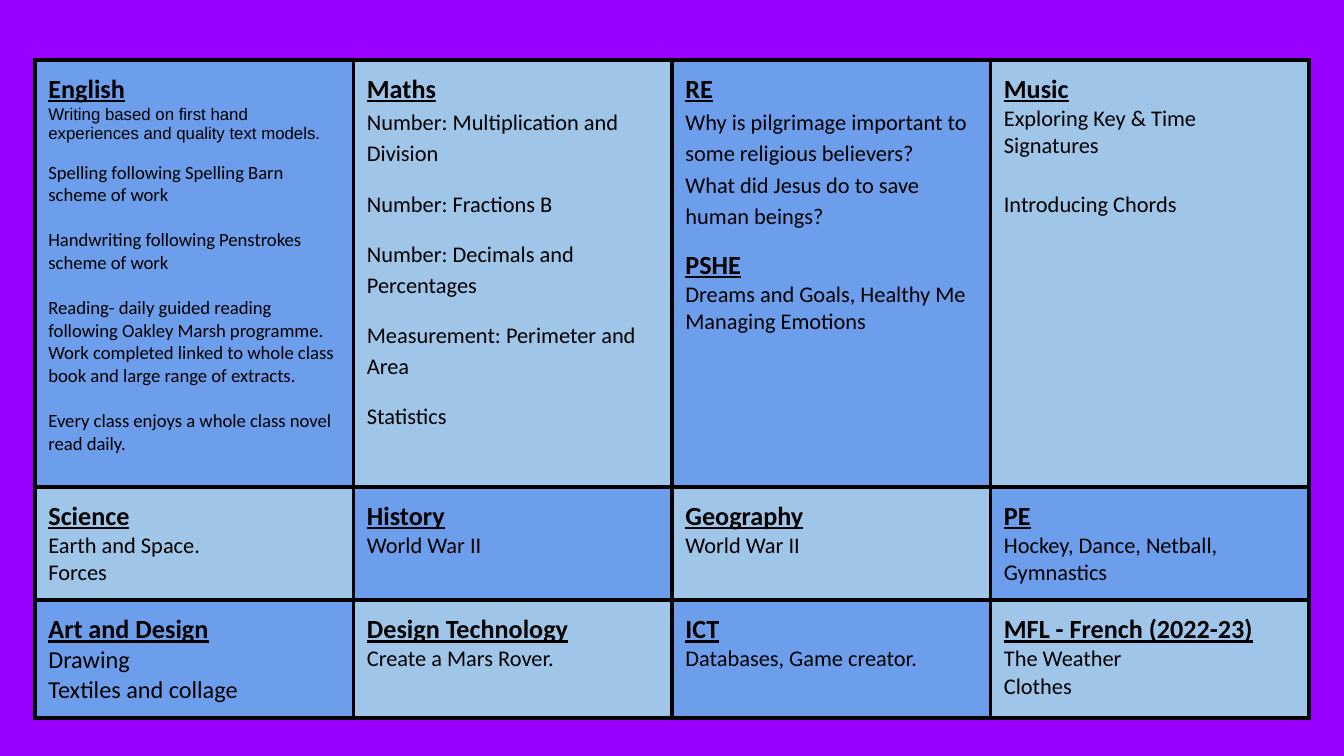
from lxml import etree
from pptx import Presentation, util as u
from pptx.dml.color import RGBColor
from pptx.oxml import ns

# Paragraph: (text, overrides); gap is the space before it in points
LOOSE = {"leading": 1.15}
SPACED = {"leading": 1.15, "gap": 10}
SMALL = {"size": "small", "gap": 12}
LARGE = {"size": "large"}
HEADING = {"size": "heading", "heading": True}

SUBJECTS = [
    [
        ("English", [
            ("Writing based on first hand experiences and quality text models.",
             {"size": "intro", "font": "intro_font"}),
            ("Spelling following Spelling Barn scheme of work", SMALL | {"gap": 10}),
            ("Handwriting following Penstrokes scheme of work", SMALL),
            ("Reading- daily guided reading following Oakley Marsh programme. "
             "Work completed linked to whole class book and large range of extracts.", SMALL),
            ("Every class enjoys a whole class novel read daily.", SMALL),
        ]),
        ("Maths", [
            ("Number: Multiplication and Division", LOOSE),
            ("Number: Fractions B", SPACED),
            ("Number: Decimals and Percentages", SPACED),
            ("Measurement: Perimeter and Area", SPACED),
            ("Statistics", SPACED),
        ]),
        ("RE", [
            ("Why is pilgrimage important to some religious believers?", LOOSE),
            ("What did Jesus do to save human beings?", LOOSE),
            ("PSHE", HEADING | {"gap": 10}),
            ("Dreams and Goals, Healthy Me", {}),
            ("Managing Emotions", {}),
        ]),
        ("Music", [
            ("Exploring Key & Time Signatures", {}),
            ("Introducing Chords", LOOSE | {"gap": 14.5}),
        ]),
    ],
    [
        ("Science", [("Earth and Space.", {}), ("Forces", {})]),
        ("History", [("World War II", {})]),
        ("Geography", [("World War II", {})]),
        ("PE", [("Hockey, Dance, Netball, Gymnastics", {})]),
    ],
    [
        ("Art and Design", [("Drawing", LARGE), ("Textiles and collage", LARGE)]),
        ("Design Technology", [("Create a Mars Rover.", {})]),
        ("ICT", [("Databases, Game creator.", {})]),
        ("MFL - French (2022-23)", [("The Weather", {}), ("Clothes", {})]),
    ],
]

THEME = {
    "background": "9900FF", "ink": "000000", "fills": ("6D9EEB", "9FC5E8"),
    "body_font": "Calibri", "intro_font": "Arial",
    "heading": 14, "large": 13, "body": 12, "small": 10, "intro": 9,
    "border": 2.25,
}
PX = u.Inches(10) / 1344
SLIDE = (1344, 756)
LEFT, TOP, WIDTH = 35, 60, 1274
ROW_HEIGHTS = (427, 113, 117)
INSET = u.Inches(0.1)


def px(n):
    return u.Emu(round(n * PX))


def rgb(name):
    return RGBColor.from_string(THEME[name])


def add_borders(cell):
    tc_pr = cell._tc.get_or_add_tcPr()
    for side in ("lnL", "lnR", "lnT", "lnB"):
        ln = etree.SubElement(tc_pr, ns.qn("a:" + side), w=str(u.Pt(THEME["border"])))
        fill = etree.SubElement(ln, ns.qn("a:solidFill"))
        etree.SubElement(fill, ns.qn("a:srgbClr"), val=THEME["ink"])


def write_paragraph(p, content, style):
    p.line_spacing = style.get("leading", 1.0)
    p.space_before = u.Pt(style.get("gap", 0))
    r = p.add_run()
    r.text = content
    r.font.name = THEME[style.get("font", "body_font")]
    r.font.size = u.Pt(THEME[style.get("size", "body")])
    r.font.color.rgb = rgb("ink")
    r.font.bold = r.font.underline = style.get("heading", False)


def fill_cell(cell, subject, topics, color):
    add_borders(cell)
    cell.fill.solid()
    cell.fill.fore_color.rgb = RGBColor.from_string(color)
    cell.margin_left = cell.margin_right = INSET
    cell.margin_top = cell.margin_bottom = INSET
    tf = cell.text_frame
    for i, (content, style) in enumerate([(subject, HEADING), *topics]):
        p = tf.add_paragraph() if i else tf.paragraphs[0]
        write_paragraph(p, content, style)


def main():
    prs = Presentation()
    prs.slide_width, prs.slide_height = map(px, SLIDE)
    s = prs.slides.add_slide(prs.slide_layouts[6])
    s.background.fill.solid()
    s.background.fill.fore_color.rgb = rgb("background")

    columns = len(SUBJECTS[0])
    table = s.shapes.add_table(len(SUBJECTS), columns, px(LEFT), px(TOP),
                               px(WIDTH), px(sum(ROW_HEIGHTS))).table
    table.first_row = table.horz_banding = False
    for column in table.columns:
        column.width = px(WIDTH / columns)
    for row, height in zip(table.rows, ROW_HEIGHTS):
        row.height = px(height)
    for i, subjects in enumerate(SUBJECTS):
        for j, (subject, topics) in enumerate(subjects):
            fill_cell(table.cell(i, j), subject, topics, THEME["fills"][(i + j) % 2])

    prs.save("out.pptx")


if __name__ == "__main__":
    main()
